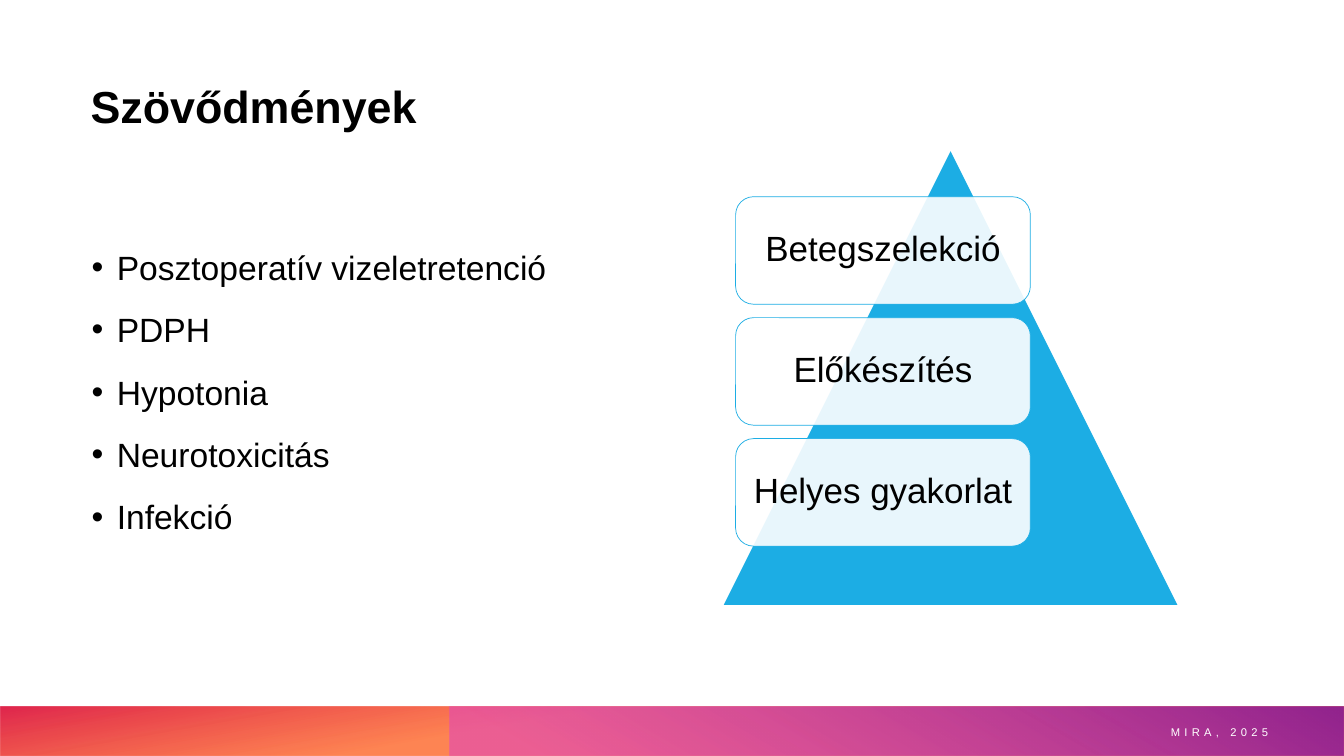
"""Build the slide on complications with a bullet list and a pyramid of three steps."""
from lxml import etree
from pptx import Presentation
from pptx.dml.color import RGBColor
from pptx.enum.shapes import MSO_SHAPE
from pptx.enum.text import MSO_ANCHOR, PP_ALIGN
from pptx.oxml.ns import qn
from pptx.util import Pt

RECTANGLE = MSO_SHAPE.RECTANGLE
TRIANGLE = MSO_SHAPE.ISOSCELES_TRIANGLE
ROUNDED = MSO_SHAPE.ROUNDED_RECTANGLE
TOP, MIDDLE, BOTTOM = MSO_ANCHOR.TOP, MSO_ANCHOR.MIDDLE, MSO_ANCHOR.BOTTOM
LEFT, CENTER, RIGHT = PP_ALIGN.LEFT, PP_ALIGN.CENTER, PP_ALIGN.RIGHT

COLORS = {
    "text": "000000",
    "white": "FFFFFF",
    "blue": "1CADE4",
    "orange": "FE4A00",
    "red": "DA002F",
    "pink": "E349BB",
    "purple": "92248E",
}
FONT = "Arial"
COMPLICATIONS = ["Posztoperatív vizeletretenció", "PDPH", "Hypotonia", "Neurotoxicitás", "Infekció"]
STEPS = ["Betegszelekció", "Előkészítés", "Helyes gyakorlat"]
SLIDE_WIDTH, SLIDE_HEIGHT = 960, 540
BAND_TOP, BAND_HEIGHT = 504.5, 35.5
STEP_TOP, STEP_PITCH = 140.5, 86.4


def rgb(name):
    """Return the named colour."""
    return RGBColor.from_string(COLORS[name])


def set_alpha(color_element, percent):
    """Set the opacity of a colour element."""
    etree.SubElement(color_element, qn("a:alpha")).set("val", str(percent * 1000))


def add_plain_shape(slide, kind, box, fill):
    """Add a preset shape with a solid fill and neither line nor shadow."""
    shape = slide.shapes.add_shape(kind, *map(Pt, box))
    shape.shadow.inherit = False
    shape.fill.solid()
    shape.fill.fore_color.rgb = rgb(fill)
    shape.line.fill.background()
    return shape


def add_gradient_band(slide, left, stops, angle, rotation=0):
    """Add a mirrored band from left to the slide edge, with a linear gradient."""
    box = (left, BAND_TOP, SLIDE_WIDTH - left, BAND_HEIGHT)
    band = add_plain_shape(slide, RECTANGLE, box, "white")
    band.rotation = rotation
    properties = band._element.spPr
    properties.find(qn("a:xfrm")).set("flipH", "1")
    gradient = etree.Element(qn("a:gradFill"), rotWithShape="1")
    stop_list = etree.SubElement(gradient, qn("a:gsLst"))
    for position, color, opacity in stops:
        stop = etree.SubElement(stop_list, qn("a:gs"), pos=str(position * 1000))
        set_alpha(etree.SubElement(stop, qn("a:srgbClr"), val=COLORS[color]), opacity)
    etree.SubElement(gradient, qn("a:lin"), ang=str(angle * 60000), scaled="0")
    properties.replace(properties.find(qn("a:solidFill")), gradient)


def write_text(frame, lines, size, color="text", align=LEFT, anchor=TOP, spacing=1.0, bold=False):
    """Fill a text frame and format all its paragraphs alike."""
    frame.word_wrap = True
    frame.vertical_anchor = anchor
    frame.text = "\n".join(lines)
    for paragraph in frame.paragraphs:
        paragraph.alignment = align
        paragraph.line_spacing = spacing
        for run in paragraph.runs:
            run.font.name = FONT
            run.font.size = Pt(size)
            run.font.bold = bold
            run.font.color.rgb = rgb(color)


def add_text(slide, box, lines, size, **style):
    """Add a text box and return its frame."""
    frame = slide.shapes.add_textbox(*map(Pt, box)).text_frame
    write_text(frame, lines, size, **style)
    return frame


def add_bullets(slide, box, items):
    """Add a bulleted list with hanging indents."""
    frame = add_text(slide, box, items, 24, spacing=1.2)
    for index, paragraph in enumerate(frame.paragraphs):
        if index:
            paragraph.space_before = Pt(10)
        properties = paragraph._p.get_or_add_pPr()
        properties.set("marL", str(Pt(18)))
        properties.set("indent", str(-Pt(18)))
        etree.SubElement(properties, qn("a:buFont"), typeface=FONT)
        etree.SubElement(properties, qn("a:buChar"), char="•")


def add_step(slide, top, label):
    """Add one translucent rounded card of the pyramid."""
    card = add_plain_shape(slide, ROUNDED, (525.5, top, 210.5, 76.8), "white")
    set_alpha(card._element.spPr.find(qn("a:solidFill")).find(qn("a:srgbClr")), 90)
    card.line.color.rgb = rgb("blue")
    card.line.width = Pt(0.5)
    frame = card.text_frame
    frame.margin_left = frame.margin_right = frame.margin_top = frame.margin_bottom = Pt(7.2)
    write_text(frame, [label], 25, align=CENTER, anchor=MIDDLE, spacing=0.9)


def add_footer(slide, label):
    """Add the letter-spaced footer on the band."""
    frame = add_text(slide, (545, 508.3, 368, 28.8), [label], 8, color="white", align=RIGHT, anchor=MIDDLE)
    frame.paragraphs[0].runs[0].font._element.set("spc", "300")


def main():
    """Build and save the slide."""
    presentation = Presentation()
    presentation.slide_width, presentation.slide_height = Pt(SLIDE_WIDTH), Pt(SLIDE_HEIGHT)
    slide = presentation.slides.add_slide(presentation.slide_layouts[6])
    add_gradient_band(slide, 0, [(62, "orange", 67), (100, "red", 85)], 100, rotation=180)
    add_gradient_band(slide, 321, [(9, "pink", 62), (99, "purple", 100)], 240)
    add_text(slide, (57.6, 23, 854, 75.6), ["Szövődmények"], 32, anchor=BOTTOM, spacing=0.9, bold=True)
    add_bullets(slide, (58.3, 167, 400, 324), COMPLICATIONS)
    add_plain_shape(slide, TRIANGLE, (517, 108, 324, 324), "blue")
    for index, label in enumerate(STEPS):
        add_step(slide, STEP_TOP + index * STEP_PITCH, label)
    add_footer(slide, "MIRA, 2025")
    presentation.save("out.pptx")


if __name__ == "__main__":
    main()
